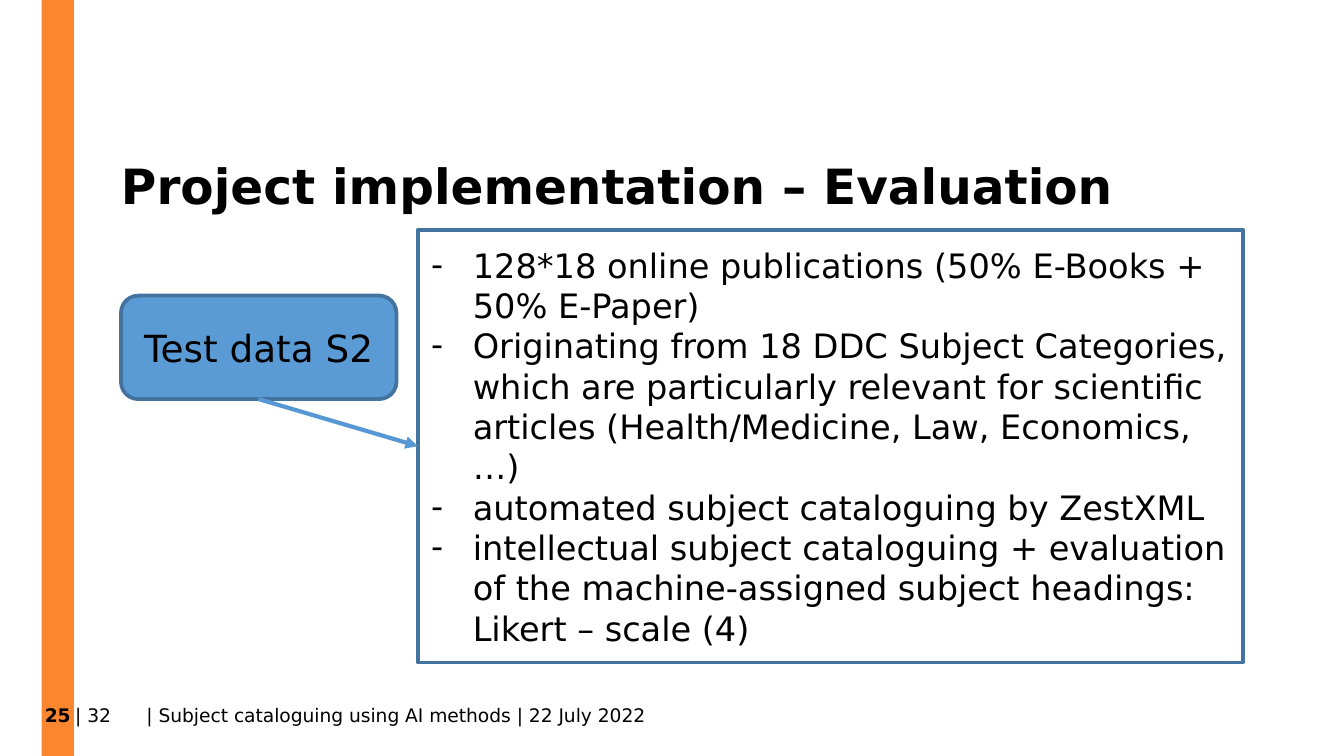
"""Builds the evaluation slide with the test data box and its description."""
from lxml import etree
from pptx import Presentation
from pptx.dml.color import RGBColor
from pptx.enum.shapes import MSO_CONNECTOR, MSO_SHAPE
from pptx.enum.text import MSO_ANCHOR, MSO_AUTO_SIZE, PP_ALIGN
from pptx.oxml.ns import qn
from pptx.util import Inches, Pt

TOP, MIDDLE, BOTTOM = MSO_ANCHOR.TOP, MSO_ANCHOR.MIDDLE, MSO_ANCHOR.BOTTOM
LEFT, CENTER = PP_ALIGN.LEFT, PP_ALIGN.CENTER
RECTANGLE, ROUNDED = MSO_SHAPE.RECTANGLE, MSO_SHAPE.ROUNDED_RECTANGLE
STRAIGHT, NO_FIT = MSO_CONNECTOR.STRAIGHT, MSO_AUTO_SIZE.NONE
FONT, BULLET_FONT = "DejaVu Sans", "DejaVu Sans"
BLACK, ORANGE, BLUE, DARK_BLUE, ARROW_BLUE = "000000", "FB8630", "5B9BD5", "43739E", "5698D3"
TITLE_ONLY = 5


def color(value):
    return RGBColor.from_string(value)


def write(shape, lines, size, bold=False, align=LEFT, anchor=TOP, margins=(0, 0, 0, 0),
          wrap=True, spacing=None, bullet=None, tab=None):
    frame = shape.text_frame
    frame.auto_size = NO_FIT
    frame.word_wrap = wrap
    frame.vertical_anchor = anchor
    frame.margin_left, frame.margin_top, frame.margin_right, frame.margin_bottom = map(Inches, margins)
    for index, line in enumerate(lines):
        para = frame.add_paragraph() if index else frame.paragraphs[0]
        para.alignment = align
        if spacing:
            para.line_spacing = Pt(spacing)
        properties = para._p.get_or_add_pPr()
        if bullet:
            properties.set("marL", str(Inches(0.31)))
            properties.set("indent", str(-Inches(0.31)))
            etree.SubElement(properties, qn("a:buFont"), typeface=BULLET_FONT)
            etree.SubElement(properties, qn("a:buChar"), char=bullet)
        if tab:
            tabs = etree.SubElement(properties, qn("a:tabLst"))
            etree.SubElement(tabs, qn("a:tab"), pos=str(Inches(tab)), algn="l")
        span = para.add_run()
        span.text = line
        span.font.name = FONT
        span.font.size = Pt(size)
        span.font.bold = bold
        span.font.color.rgb = color(BLACK)


deck = Presentation()
deck.slide_width = Inches(10)
deck.slide_height = deck.slide_width * 9 // 16
page = deck.slides.add_slide(deck.slide_layouts[TITLE_ONLY])

title = page.shapes.title
title.left, title.top, title.width, title.height = map(Inches, (0.9, 1.18, 8.3, 0.85))
write(title, ["Project implementation – Evaluation"], 26, bold=True, spacing=30)

footer = page.shapes.add_textbox(Inches(0.56), Inches(5.24), Inches(8.61), Inches(0.17))
write(footer, ["| 32\t| Subject cataloguing using AI methods | 22 July 2022"], 10, tab=0.53)

boxes = []
for preset, place, fill, line in (
    (RECTANGLE, (0.31, 0, 0.24, 5.62), ORANGE, None),
    (ROUNDED, (0.9, 2.2, 2.05, 0.77), BLUE, DARK_BLUE),
    (RECTANGLE, (3.11, 1.71, 6.14, 3.22), None, DARK_BLUE),
):
    box = page.shapes.add_shape(preset, *map(Inches, place))
    box.shadow.inherit = False
    if fill:
        box.fill.solid()
        box.fill.fore_color.rgb = color(fill)
    else:
        box.fill.background()
    if line:
        box.line.color.rgb = color(line)
        box.line.width = Pt(2)
    else:
        box.line.fill.background()
    boxes.append(box)
number_bar, test_data, description = boxes
number_bar.height = deck.slide_height

write(number_bar, ["25"], 10, bold=True, align=CENTER, anchor=BOTTOM,
      margins=(0, 0.05, 0, 0.22), wrap=False)
write(test_data, ["Test data S2"], 20, align=CENTER, anchor=MIDDLE, spacing=24)
write(description, [
    "128*18 online publications (50% E-Books + 50% E-Paper)",
    "Originating from 18 DDC Subject Categories, which are particularly relevant for "
    "scientific articles (Health/Medicine, Law, Economics, …)",
    "automated subject cataloguing by ZestXML",
    "intellectual subject cataloguing + evaluation of the machine-assigned subject headings: "
    "Likert – scale (4)",
], 18, anchor=MIDDLE, margins=(0.1, 0.05, 0.1, 0.05), bullet="-")

arrow = page.shapes.add_connector(STRAIGHT, 0, 0, 0, 0)
arrow.begin_connect(test_data, 2)
arrow.end_connect(description, 1)
arrow.line.color.rgb = color(ARROW_BLUE)
arrow.line.width = Pt(2.25)
etree.SubElement(arrow.line._get_or_add_ln(), qn("a:tailEnd"), type="triangle")
etree.SubElement(arrow._element.spPr, qn("a:effectLst"))

deck.save("out.pptx")
